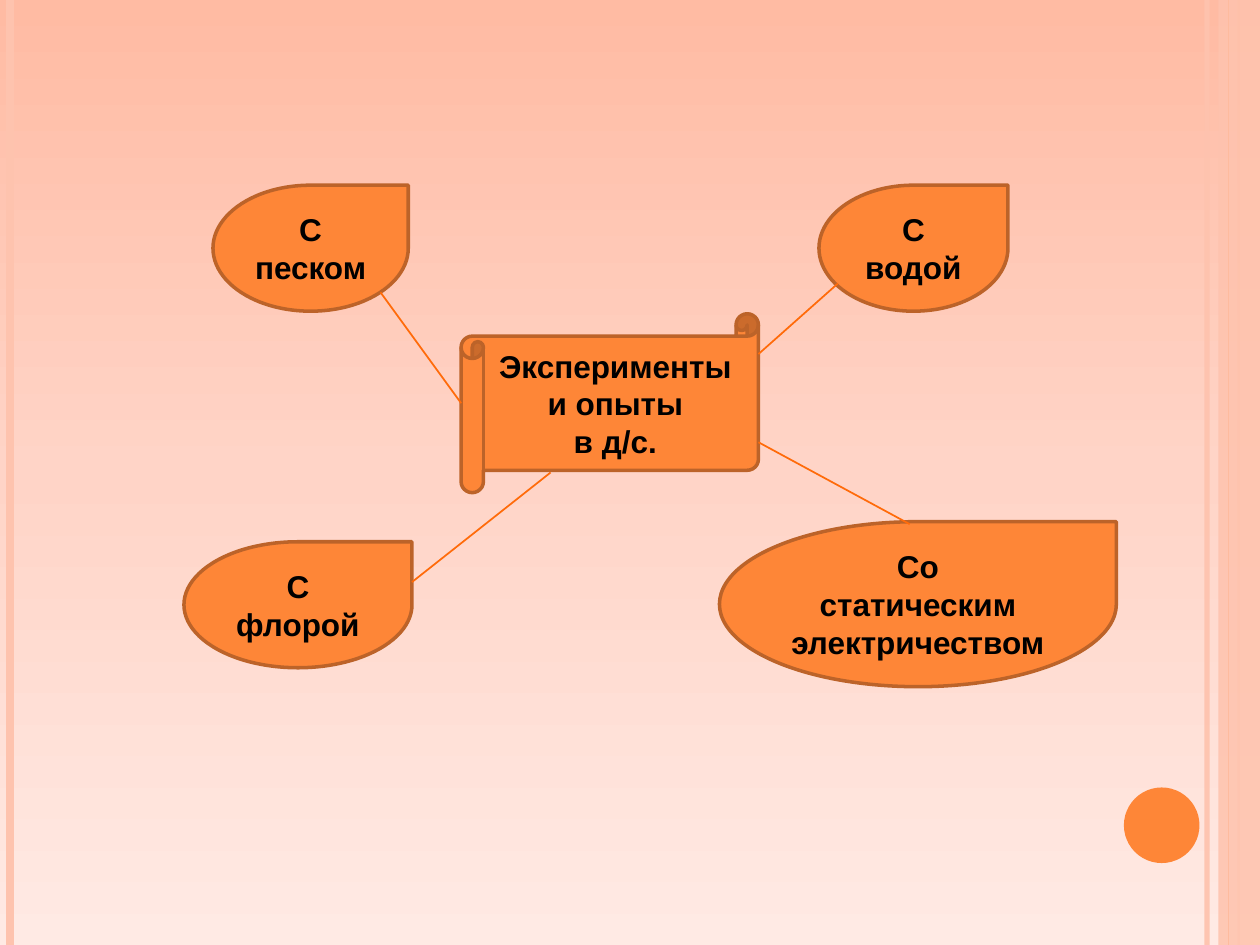
from copy import deepcopy

from lxml import etree
from pptx import Presentation
from pptx.dml.color import RGBColor
from pptx.enum import shapes as kinds, text as align
from pptx.oxml.ns import qn
from pptx.util import Inches, Pt

ORANGE = RGBColor(0xFE, 0x86, 0x37)
BROWN = RGBColor(0xBC, 0x63, 0x29)
PEACH = RGBColor(0xFE, 0xC3, 0xAE)
LINK = RGBColor(0xFF, 0x6B, 0x0A)
BLACK = RGBColor(0, 0, 0)
BACKGROUND = [
    (0, RGBColor(0xFF, 0xBB, 0xA3)),
    (0.5, RGBColor(0xFF, 0xD4, 0xC7)),
    (1, RGBColor(0xFF, 0xEA, 0xE4)),
]
FONT = {"name": "Arial", "size": Pt(18), "bold": True}
SHAPE = kinds.MSO_SHAPE


def add_line(start, end, color, width, opacity=100):
    line = slide.shapes.add_connector(
        kinds.MSO_CONNECTOR.STRAIGHT, *map(Inches, start + end))
    line.line.color.rgb = color
    line.line.width = Pt(width)
    etree.SubElement(line._element.spPr, qn("a:effectLst"))
    set_opacity(line, opacity)
    return line


def set_opacity(shape, percent):
    if percent < 100:
        color = shape._element.spPr.find(".//" + qn("a:srgbClr"))
        etree.SubElement(color, qn("a:alpha"), val=str(percent * 1000))


deck = Presentation()
deck.slide_width, deck.slide_height = Inches(10), Inches(7.5)
slide = deck.slides.add_slide(deck.slide_layouts[6])

# Background gradient, running from top to bottom
fill = slide.background.fill
fill.gradient()
fill.gradient_angle = 270
stop_list = slide.element.find(".//" + qn("a:gsLst"))
stop_list.append(deepcopy(stop_list[-1]))
for stop, (position, color) in zip(fill.gradient_stops, BACKGROUND):
    stop.position = position
    stop.color.rgb = color

# Side stripes, band and circle
for x, color, width, opacity in [
    (9.58, PEACH, 3, 93),
    (0.08, PEACH, 4.5, 100),
    (9.83, ORANGE, 1.5, 20),
    (9.75, ORANGE, 0.75, 100),
]:
    add_line((x, 0), (x, 7.5), color, width, opacity)

for kind, place, color, opacity in [
    (SHAPE.RECTANGLE, (9.67, 0, 0.33, 7.5), PEACH, 87),
    (SHAPE.OVAL, (8.92, 6.25, 0.6, 0.6), ORANGE, 100),
]:
    ornament = slide.shapes.add_shape(kind, *map(Inches, place))
    ornament.shadow.inherit = False
    ornament.fill.solid()
    ornament.fill.fore_color.rgb = color
    ornament.line.fill.background()
    set_opacity(ornament, opacity)

# Central scroll and the topics around it
topics = []
for kind, place, lines in [
    (SHAPE.HORIZONTAL_SCROLL, (3.66, 2.49, 2.36, 1.42),
     ["Эксперименты", "и опыты", "в д/с."]),
    (SHAPE.TEAR, (1.46, 4.3, 1.81, 1), ["С флорой"]),
    (SHAPE.TEAR, (1.69, 1.47, 1.55, 1), ["С песком"]),
    (SHAPE.TEAR, (6.5, 1.47, 1.5, 1), ["С водой"]),
    (SHAPE.TEAR, (5.71, 4.14, 3.15, 1.31), ["Со", "статическим электричеством"]),
]:
    topic = slide.shapes.add_shape(kind, *map(Inches, place))
    topic.shadow.inherit = False
    topic.fill.solid()
    topic.fill.fore_color.rgb = ORANGE
    topic.line.color.rgb = BROWN
    topic.line.width = Pt(2)
    frame = topic.text_frame
    frame.word_wrap = True
    frame.vertical_anchor = align.MSO_ANCHOR.MIDDLE
    frame.text = "\n".join(lines)
    for para in frame.paragraphs:
        para.alignment = align.PP_ALIGN.CENTER
        for span in para.runs:
            for name, value in FONT.items():
                setattr(span.font, name, value)
            span.font.color.rgb = BLACK
    topics.append(topic)

# Links between the scroll and its topics
scroll = topics[0]
sand_link = add_line((3.02, 2.32), (3.66, 3.2), LINK, 1)
sand_link.end_connect(scroll, 1)
for start, end in [
    ((3.27, 4.62), (4.37, 3.75)),
    ((6.65, 2.25), (6.02, 2.81)),
    ((6.02, 3.51), (7.22, 4.16)),
]:
    add_line(start, end, LINK, 1)

deck.save("out.pptx")
